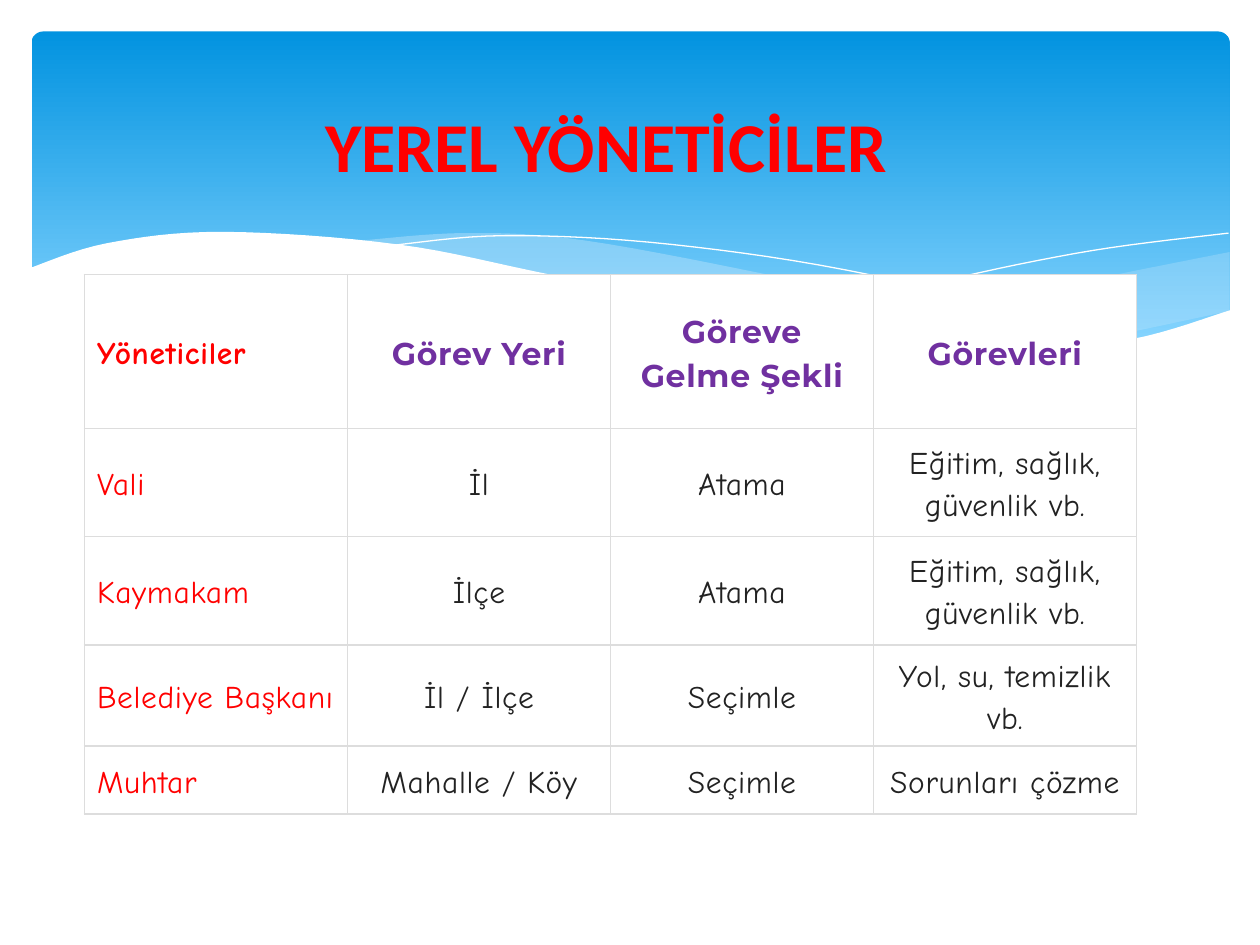
from lxml import etree
from pptx import Presentation, util as u
from pptx.dml.color import RGBColor as Rgb
from pptx.enum import shapes, text
from pptx.oxml.ns import qn

theme = {
    "red": "FF0000", "plum": "7030A0", "ink": "222222", "white": "FFFFFF",
    "rule": "DDDDDD", "sky": "0293E0", "pale": "83D3FE", "mist": "C6E7FC",
    "head": u.Pt(40), "cell": u.Pt(18),
    "main": "Calibri", "hand": "Comic Neue", "bold": "Montserrat",
}


def put(item, form):
    """Set each attribute of item named in form; a colour goes in as rgb."""
    for key, val in form.items():
        setattr(item, key, Rgb.from_string(theme[val]) if key == "rgb" else val)


def curve(knots, steps=8):
    """Return points of a smooth Catmull-Rom curve through the knots."""
    ends = [knots[0], *knots, knots[-1]]
    dots = [knots[0]]
    for quad in zip(ends, ends[1:], ends[2:], ends[3:]):
        for n in range(1, steps + 1):
            t = n / steps
            dots.append(tuple(
                b + t * ((c - a) + t * ((2 * a - 5 * b + 4 * c - d)
                         + t * (3 * b - a - 3 * c + d))) / 2
                for a, b, c, d in zip(*quad)))
    return dots


deck = Presentation()
put(deck, {"slide_width": u.Inches(10), "slide_height": u.Inches(7.5)})
slide = deck.slides.add_slide(deck.slide_layouts[5])
tree = slide.shapes

# Blue band
band = tree.add_shape(shapes.MSO_SHAPE.ROUNDED_RECTANGLE, u.Inches(0.25),
                      u.Inches(0.25), u.Inches(9.51), u.Inches(2.7))
band.adjustments[0] = 0.034
band.shadow.inherit = False
band.line.fill.background()
band.fill.gradient()
band.fill.gradient_angle = 270
for stop, spot, name in zip(band.fill.gradient_stops, (0, 0.9), ("sky", "pale")):
    stop.position = spot
    put(stop.color, {"rgb": name})

# Waves: colour, opacity in percent (None for an open line), smooth edges
waves = [
    ("mist", 29, [[(9.76, 2), (8.61, 2.23), (6.61, 2.65)],
                  [(6.61, 2.65), (8.03, 2.78), (9.76, 2.47)]]),
    ("mist", 40, [[(2.86, 1.91), (3.7, 1.85), (4.65, 1.91), (6.29, 2.22),
                   (7.75, 2.54), (8.93, 2.73)],
                  [(8.93, 2.73), (7.96, 2.78), (6.65, 2.66), (4.49, 2.22),
                   (2.86, 1.91)]]),
    ("white", None, [[(3.09, 1.95), (4.01, 1.87), (5.33, 1.94), (6.95, 2.19),
                      (9.07, 2.72)]]),
    ("white", None, [[(6.13, 2.57), (7.48, 2.23), (8.66, 1.99), (9.75, 1.85)]]),
    ("white", 100, [[(9.77, 2.46), (8.99, 2.69), (8.09, 2.77), (6.88, 2.68),
                     (4.47, 2.2), (3.16, 1.94), (1.77, 1.84), (0.85, 1.93),
                     (0.23, 2.13)],
                    [(0.23, 3.29), (9.77, 3.29)]]),
]
for name, alpha, edges in waves:
    spots = [(u.Inches(x), u.Inches(y)) for edge in edges for x, y in curve(edge)]
    pen = tree.build_freeform(*spots[0])
    pen.add_line_segments(spots[1:], close=alpha is not None)
    wave = pen.convert_to_shape()
    wave.shadow.inherit = False
    if alpha is None:
        wave.fill.background()
        put(wave.line.color, {"rgb": name})
        wave.line.width = 0
        continue
    wave.line.fill.background()
    wave.fill.solid()
    put(wave.fill.fore_color, {"rgb": name})
    tint = wave._element.spPr.find(".//" + qn("a:srgbClr"))
    etree.SubElement(tint, qn("a:alpha"), val=str(alpha * 1000))

# Table of local officials
rows = [
    (1.22, "Yöneticiler", "Görev Yeri", "Göreve Gelme Şekli", "Görevleri"),
    (0.86, "Vali", "İl", "Atama", "Eğitim, sağlık, güvenlik vb."),
    (0.86, "Kaymakam", "İlçe", "Atama", "Eğitim, sağlık, güvenlik vb."),
    (0.54, "Belediye Başkanı", "İl / İlçe", "Seçimle", "Yol, su, temizlik vb."),
    (0.54, "Muhtar", "Mahalle / Köy", "Seçimle", "Sorunları çözme"),
]
frame = tree.add_table(len(rows), 4, u.Inches(0.67), u.Inches(2.18),
                       u.Inches(8.35), u.Inches(sum(row[0] for row in rows)))
grid = frame.table
put(grid, {"first_row": False, "horz_banding": False})
box = {"vertical_anchor": text.MSO_ANCHOR.MIDDLE,
       "margin_left": u.Inches(0.1), "margin_right": u.Inches(0.1),
       "margin_top": u.Inches(0.07), "margin_bottom": u.Inches(0.07)}
for r, (tall, *words) in enumerate(rows):
    grid.rows[r].height = u.Inches(tall)
    for c, word in enumerate(words):
        cell = grid.cell(r, c)
        put(cell, box)
        cell.fill.solid()
        put(cell.fill.fore_color, {"rgb": "white"})
        props = cell._tc.get_or_add_tcPr()
        for n, side in enumerate(("lnL", "lnR", "lnT", "lnB")):
            edge = etree.Element(qn("a:" + side), w=str(u.Pt(1)))
            paint = etree.SubElement(edge, qn("a:solidFill"))
            etree.SubElement(paint, qn("a:srgbClr"), val=theme["rule"])
            props.insert(n, edge)
        first, top = c == 0, r == 0
        para = cell.text_frame.paragraphs[0]
        align = text.PP_ALIGN.LEFT if first else text.PP_ALIGN.CENTER
        put(para, {"alignment": align, "line_spacing": 1.15,
                   "space_after": u.Pt(22.5)})
        run = para.add_run()
        run.text = word
        face = theme["bold" if top and not first else "hand"]
        put(run.font, {"size": theme["cell"], "bold": top, "name": face})
        put(run.font.color, {"rgb": "red" if first else "plum" if top else "ink"})
        run.font._element.set("spc", "40")

# Title, in front of the band
title = tree.title
put(title, {"left": u.Inches(2.48), "top": u.Inches(0.76),
            "width": u.Inches(5.02), "height": u.Inches(0.77)})
put(title.text_frame, {"text": "YEREL YÖNETİCİLER", "word_wrap": True,
                       "auto_size": text.MSO_AUTO_SIZE.NONE,
                       "vertical_anchor": text.MSO_ANCHOR.TOP})
line = title.text_frame.paragraphs[0]
line.alignment = text.PP_ALIGN.LEFT
font = line.runs[0].font
put(font, {"size": theme["head"], "bold": True, "name": theme["main"]})
put(font.color, {"rgb": "red"})
tree._spTree.append(title._element)

deck.save("out.pptx")
